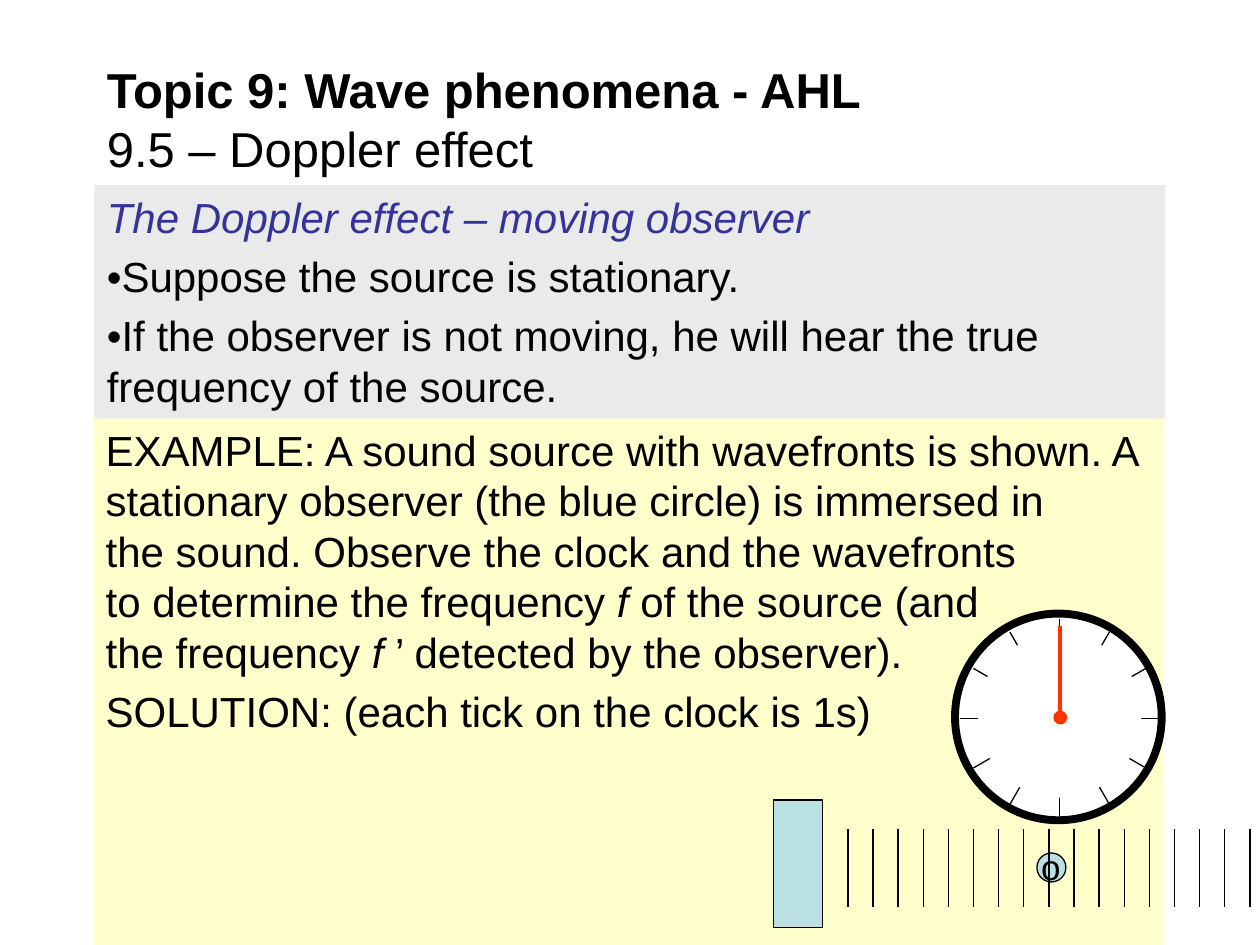
from math import cos, pi, sin

from pptx import Presentation
from pptx.dml.color import RGBColor
from pptx.enum.shapes import MSO_CONNECTOR, MSO_SHAPE
from pptx.enum.text import MSO_ANCHOR, PP_ALIGN
from pptx.oxml.ns import qn
from pptx.util import Inches, Pt

BLACK = RGBColor(0, 0, 0)
WHITE = RGBColor(255, 255, 255)
GRAY = RGBColor(0xEA, 0xEA, 0xEA)
CREAM = RGBColor(0xFF, 0xFF, 0xCC)
NAVY = RGBColor(0x33, 0x33, 0x99)
AQUA = RGBColor(0xBB, 0xE0, 0xE3)
RED = RGBColor(0xFF, 0x33, 0x00)

prs = Presentation()
prs.slide_width = Inches(10)
prs.slide_height = Inches(7.5)
slide = prs.slides.add_slide(prs.slide_layouts[6])


def add_form(kind, box, fill, edge=0):
    form = slide.shapes.add_shape(kind, *[Inches(v) for v in box])
    form.shadow.inherit = False
    form.fill.solid()
    form.fill.fore_color.rgb = fill
    if edge:
        form.line.color.rgb = BLACK
        form.line.width = Pt(edge)
    else:
        form.line.fill.background()
    return form


def add_line(x1, y1, x2, y2, color=BLACK, width=0.75):
    ends = [Inches(v) for v in (x1, y1, x2, y2)]
    line = slide.shapes.add_connector(MSO_CONNECTOR.STRAIGHT, *ends)
    line.line.color.rgb = color
    line.line.width = Pt(width)
    props = line._element.spPr
    props.append(props.makeelement(qn("a:effectLst"), {}))


# Text panels: each paragraph is a list of (text, italic, color) runs
example = [
    [
        ("EXAMPLE: A sound source with wavefronts is shown. A "
         "stationary observer (the blue circle) is immersed in", False, BLACK),
        None,
        ("the sound. Observe the clock and the wavefronts", False, BLACK),
        None,
        ("to determine the frequency ", False, BLACK),
        ("f ", True, BLACK),
        ("of the source (and", False, BLACK),
        None,
        ("the frequency ", False, BLACK),
        ("f ", True, BLACK),
        ("’ detected by the observer).", False, BLACK),
    ],
    [("SOLUTION: (each tick on the clock is 1s)", False, BLACK)],
]
theory = [
    [("The Doppler effect – moving observer", True, NAVY)],
    [("•Suppose the source is stationary.", False, BLACK)],
    [("•If the observer is not moving, he will hear the true "
      "frequency of the source.", False, BLACK)],
]
panels = [
    ((0.74, 3.32, 8.49, 4.18), CREAM, example),
    ((0.75, 1.47, 8.5, 1.85), GRAY, theory),
]
for box, fill, paras in panels:
    frame = add_form(MSO_SHAPE.RECTANGLE, box, fill).text_frame
    frame.word_wrap = True
    frame.vertical_anchor = MSO_ANCHOR.TOP
    for i, parts in enumerate(paras):
        para = frame.add_paragraph() if i else frame.paragraphs[0]
        para.alignment = PP_ALIGN.LEFT
        para.space_before = Pt(5)
        for part in parts:
            if part is None:
                para.add_line_break()
                continue
            run = para.add_run()
            run.text, run.font.italic, run.font.color.rgb = part
            run.font.name = "Arial"
            run.font.size = Pt(24)

# Observer
add_form(MSO_SHAPE.OVAL, (8.23, 6.77, 0.23, 0.23), AQUA, 0.75)
label = slide.shapes.add_textbox(
    Inches(8.16), Inches(6.66), Inches(0.37), Inches(0.43))
label.text_frame.word_wrap = False
run = label.text_frame.paragraphs[0].add_run()
run.text = "o"
run.font.name = "Courier New"
run.font.size = Pt(20)
run.font.color.rgb = BLACK

# Wavefronts and their source
for i in range(18):
    x = 6.53 + i * (9.92 - 6.53) / 17
    add_line(x, 6.58, x, 7.2)
add_form(MSO_SHAPE.RECTANGLE, (6.14, 6.35, 0.39, 1.01), AQUA, 0.75)

# Clock: six diameters, covered in the middle to leave twelve ticks
mid_x, mid_y, reach = 8.41, 5.7, 0.79
add_form(MSO_SHAPE.OVAL, (7.58, 4.87, 1.64, 1.64), WHITE, 4.5)
for i in range(6):
    dx, dy = reach * cos(i * pi / 6), reach * sin(i * pi / 6)
    add_line(mid_x - dx, mid_y - dy, mid_x + dx, mid_y + dy)
add_form(MSO_SHAPE.OVAL, (7.76, 5.03, 1.3, 1.3), WHITE)
add_line(mid_x, 4.97, mid_x, mid_y, RED, 2.25)
add_form(MSO_SHAPE.OVAL, (8.36, 5.64, 0.11, 0.11), RED)

# Title
title = slide.shapes.add_textbox(
    Inches(0.75), Inches(0.45), Inches(8.5), Inches(0.98))
title.text_frame.word_wrap = True
title.text_frame.vertical_anchor = MSO_ANCHOR.MIDDLE
para = title.text_frame.paragraphs[0]
for text, bold in (("Topic 9: Wave phenomena - AHL", True),
                   ("9.5 – Doppler effect", False)):
    if not bold:
        para.add_line_break()
    run = para.add_run()
    run.text = text
    run.font.name = "Arial"
    run.font.size = Pt(28)
    run.font.bold = bold
    run.font.color.rgb = BLACK

prs.save("out.pptx")
